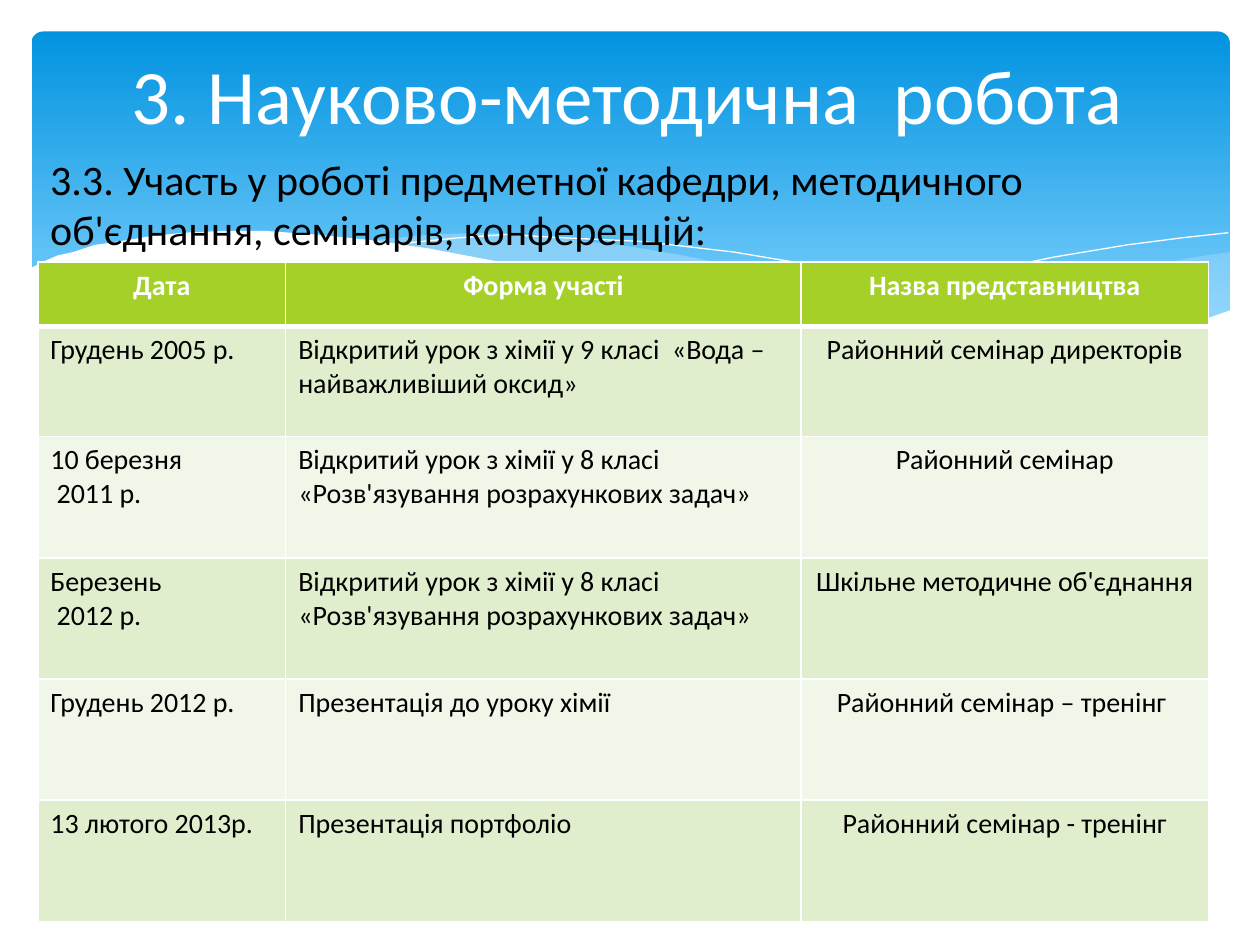
import pptx
import pptx.util
import pptx.oxml
import pptx.oxml.ns
from pptx.dml.color import RGBColor
from pptx.enum.shapes import MSO_SHAPE
from pptx.enum.text import MSO_ANCHOR, MSO_AUTO_SIZE, PP_ALIGN
from lxml import etree

Pt = pptx.util.Pt
WHITE = RGBColor(0xFF, 0xFF, 0xFF)
BLACK = RGBColor(0, 0, 0)
SKY = RGBColor(0x02, 0x93, 0xE0)
PALE = RGBColor(0x83, 0xD3, 0xFE)
MIST = RGBColor(0xC6, 0xE7, 0xFC)
LIME = RGBColor(0xA5, 0xD0, 0x28)
BANDS = (RGBColor(0xE1, 0xEE, 0xCD), RGBColor(0xF0, 0xF7, 0xE8))
FONT = "Calibri"

TITLE = "3. Науково-методична  робота"
INTRO = "3.3. Участь у роботі предметної кафедри, методичного об'єднання, семінарів, конференцій:"
TASK = "Відкритий урок з хімії у 8 класі «Розв'язування розрахункових задач»"
ROWS = [
    ("Дата", "Форма участі", "Назва представництва"),
    ("Грудень 2005 р.", "Відкритий урок з хімії у 9 класі  «Вода – найважливіший оксид»",
     "Районний семінар директорів"),
    ("10 березня\n 2011 р.", TASK, "Районний семінар"),
    ("Березень\n 2012 р.", TASK, "Шкільне методичне об'єднання "),
    ("Грудень 2012 р.", "Презентація до уроку хімії", "Районний семінар – тренінг "),
    ("13 лютого 2013р.", "Презентація портфоліо", "Районний семінар - тренінг"),
]
WIDTHS = (141.7, 294.6, 232.6)
HEIGHTS = (36.8, 62.8, 69.5, 69.2, 69.2, 69.2)

# Waves: points, fill, opacity in percent (no fill means a thin white curve)
WAVES = [
    ([(702.7, 144), (682, 147), (652, 153), (620, 161), (580, 170), (542, 179),
      (508, 185), (476, 191), (508, 195), (536, 198), (562, 199.5), (586, 200),
      (608, 199), (628, 197), (652, 193.5), (673, 189), (693, 181.5),
      (702.7, 178)], MIST, 29),
    ([(643, 196.5), (602, 191), (558, 183), (508, 173), (453, 160), (420, 152),
      (390, 146), (361, 141), (335, 137.5), (302, 134.5), (274, 133), (248, 134),
      (225, 135.5), (206, 137.5), (246, 143), (291, 152), (323, 160), (382, 173),
      (433, 183.5), (479, 191.5), (520, 197), (557, 199.5), (589, 200),
      (617, 199)], MIST, 40),
    ([(222.5, 140.5), (241, 137.5), (261, 136), (289, 134.5), (324, 135.5),
      (367, 138), (419, 144), (479, 153.5), (547, 168), (598, 180.5),
      (653, 196)], None, 100),
    ([(441.5, 185), (484, 173.5), (539, 160.5), (602, 147), (644.5, 139.5),
      (675, 135.5), (702, 133)], None, 100),
    ([(703.5, 177), (684, 184.5), (662, 191), (639, 195), (612, 198),
      (582, 199.5), (548, 198), (510, 194.5), (466.5, 188.5), (434, 183),
      (400, 176.5), (362, 168), (322, 158.5), (281.5, 149), (245, 142),
      (210, 137), (180, 134), (152, 132.5), (127, 132.5), (105, 133),
      (86, 135), (68.5, 137.5), (54.5, 140.5), (42.5, 143.5), (33, 146),
      (26, 149), (16.5, 153.5), (16.5, 237), (703.5, 237)], WHITE, 100),
]


def place(shape, *box):
    shape.left, shape.top, shape.width, shape.height = map(Pt, box)


def style(para, size, color, bold=False, align=PP_ALIGN.LEFT):
    para.alignment = align
    font = para.font
    font.name, font.size, font.bold = FONT, Pt(size), bold
    font.color.rgb = color


def draw_wave(shapes, points, fill, alpha):
    pen = shapes.build_freeform(*points[0], scale=Pt(1))
    pen.add_line_segments(points[1:], close=fill is not None)
    wave = pen.convert_to_shape()
    wave.shadow.inherit = False
    if fill is None:
        wave.fill.background()
        wave.line.color.rgb = WHITE
        wave.line.width = Pt(0)
        return
    wave.line.fill.background()
    wave.fill.solid()
    wave.fill.fore_color.rgb = fill
    if alpha < 100:
        tint = wave.element.spPr.find(".//" + pptx.oxml.ns.qn("a:srgbClr"))
        etree.SubElement(tint, pptx.oxml.ns.qn("a:alpha"), val=str(alpha * 1000))


def add_edges(cell, **widths):
    """Give a cell white borders; widths are points for L, R, T and B."""
    props = cell._tc.get_or_add_tcPr()
    for spot, side in enumerate("LRTB"):
        props.insert(spot, pptx.oxml.parse_xml(
            f'<a:ln{side} {pptx.oxml.ns.nsdecls("a")} w="{Pt(widths.get(side, 1))}">'
            f'<a:solidFill><a:srgbClr val="{WHITE}"/></a:solidFill></a:ln{side}>'))


def fill_table(table):
    for col, width in zip(table.columns, WIDTHS):
        col.width = Pt(width)
    for r, (row, height) in enumerate(zip(ROWS, HEIGHTS)):
        table.rows[r].height = Pt(height)
        head = r == 0
        for c, text in enumerate(row):
            cell = table.cell(r, c)
            cell.text = text
            cell.fill.solid()
            cell.fill.fore_color.rgb = LIME if head else BANDS[(r - 1) % 2]
            add_edges(cell, T=3 if r == 1 else 1, B=3 if head else 1)
            align = PP_ALIGN.CENTER if head or c == 2 else PP_ALIGN.LEFT
            for para in cell.text_frame.paragraphs:
                style(para, 16, WHITE if head else BLACK, head, align)


def main():
    deck = pptx.Presentation()
    deck.slide_width, deck.slide_height = Pt(720), Pt(540)
    slide = deck.slides.add_slide(deck.slide_layouts[5])
    shapes = slide.shapes

    panel = shapes.add_shape(MSO_SHAPE.ROUNDED_RECTANGLE,
                             Pt(18), Pt(18), Pt(684.7), Pt(194.4))
    panel.adjustments[0] = 0.034
    panel.shadow.inherit = False
    panel.line.fill.background()
    panel.fill.gradient()
    panel.fill.gradient_angle = 270
    for stop, color, spot in zip(panel.fill.gradient_stops, (SKY, PALE), (0, 0.9)):
        stop.color.rgb = color
        stop.position = spot
    for wave in WAVES:
        draw_wave(shapes, *wave)

    title = shapes.title
    place(title, 34.6, 0.7, 648, 105.8)
    title.text = TITLE
    title.text_frame.vertical_anchor = MSO_ANCHOR.MIDDLE
    title.text_frame.auto_size = MSO_AUTO_SIZE.NONE
    style(title.text_frame.paragraphs[0], 44, WHITE, align=PP_ALIGN.CENTER)
    title.element.getparent().append(title.element)  # bring in front of the waves

    frame = shapes.add_table(len(ROWS), len(WIDTHS), Pt(21.6), Pt(149.8),
                             Pt(sum(WIDTHS)), Pt(sum(HEIGHTS)))
    fill_table(frame.table)

    intro = shapes.add_textbox(Pt(21.6), Pt(84.2), Pt(674.6), Pt(65.5))
    intro.text_frame.word_wrap = True
    intro.text_frame.auto_size = MSO_AUTO_SIZE.SHAPE_TO_FIT_TEXT
    intro.text_frame.text = INTRO
    style(intro.text_frame.paragraphs[0], 24, BLACK)

    deck.save("out.pptx")


if __name__ == "__main__":
    main()
